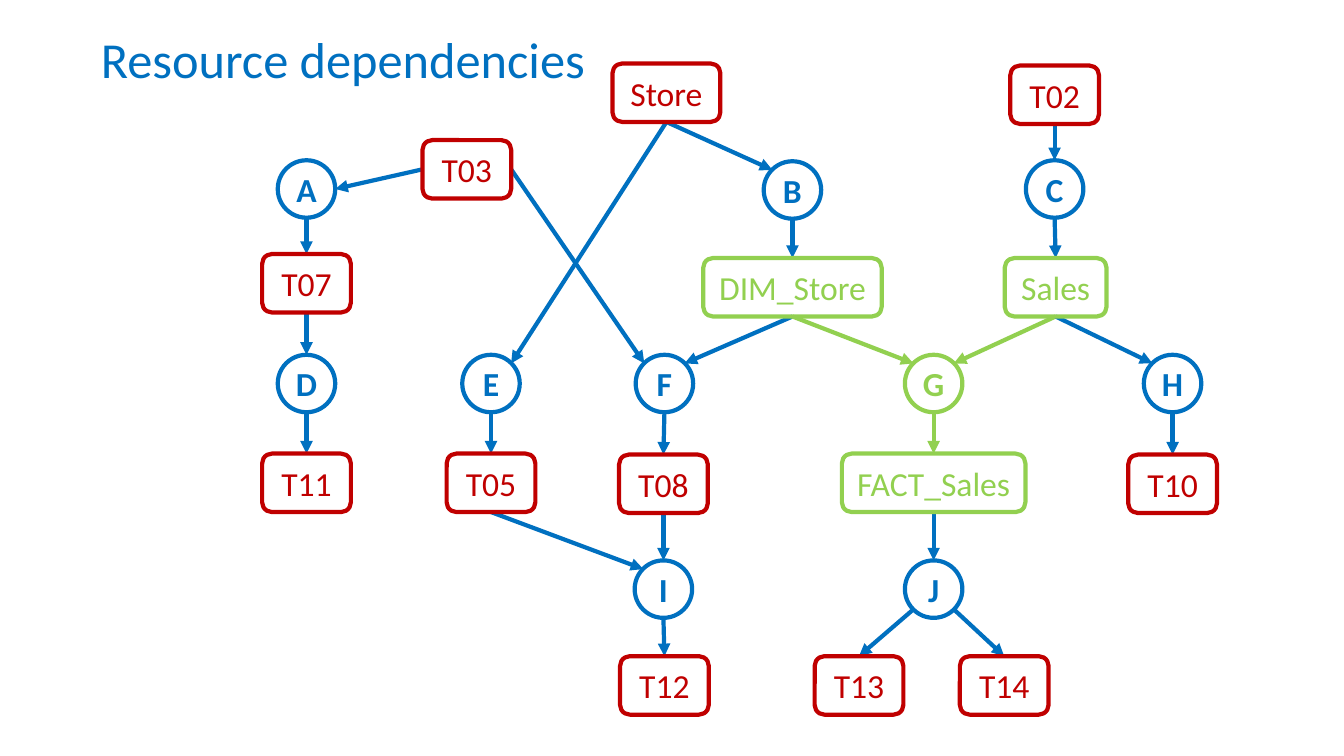
from pptx import Presentation
from pptx.dml.color import RGBColor
from pptx.enum.shapes import MSO_CONNECTOR, MSO_SHAPE
from pptx.enum.text import MSO_ANCHOR, MSO_AUTO_SIZE, PP_ALIGN
from pptx.oxml.ns import qn
from pptx.util import Inches, Pt
from lxml.etree import SubElement

COLORS = {"blue": "0070C0", "red": "C00000", "green": "92D050"}
FONT = "Calibri"
CIRCLE = 0.57
BOX_HEIGHT = 0.58
BOX_WIDTH = 0.88

# name: (centre x, top)
CIRCLES = {
    "A": (0.44, 0.96), "B": (5.26, 0.97), "C": (7.86, 0.96),
    "D": (0.44, 2.89), "E": (2.27, 2.89), "F": (3.99, 2.89),
    "G": (6.66, 2.89), "H": (9.03, 2.89),
    "I": (3.98, 4.93), "J": (6.66, 4.93),
}
BOXES = {
    "Store": (4.01, 0), "T02": (7.86, 0.02), "T03": (2.03, 0.76),
    "DIM_Store": (5.26, 1.93), "Sales": (7.87, 1.93), "T07": (0.44, 1.89),
    "T05": (2.27, 3.87), "T08": (3.98, 3.88), "FACT_Sales": (6.66, 3.87),
    "T10": (9.03, 3.88), "T11": (0.44, 3.87), "T12": (3.99, 5.88),
    "T13": (5.92, 5.88), "T14": (7.36, 5.88),
}
WIDTHS = {"Store": 1.07, "DIM_Store": 1.77, "Sales": 1.01, "FACT_Sales": 1.82}
GREEN_NODES = {"DIM_Store", "Sales", "G", "FACT_Sales"}
SITES = {"top": 0, "left": 1, "bottom": 2, "right": 3}
ANCHORS = {
    "top": (0.5, 0), "left": (0, 0.5), "bottom": (0.5, 1), "right": (1, 0.5),
    "nw": (0.15, 0.15), "ne": (0.85, 0.15),
    "sw": (0.15, 0.85), "se": (0.85, 0.85),
}
EDGES = [
    ("DIM_Store", "bottom", "F", "ne"), ("G", "bottom", "FACT_Sales", "top"),
    ("E", "bottom", "T05", "top"), ("F", "bottom", "T08", "top"),
    ("DIM_Store", "bottom", "G", "nw"), ("Sales", "bottom", "G", "ne"),
    ("Sales", "bottom", "H", "nw"), ("T03", "left", "A", "right"),
    ("A", "bottom", "T07", "top"), ("T03", "right", "F", "nw"),
    ("Store", "bottom", "E", "ne"), ("Store", "bottom", "B", "nw"),
    ("T02", "bottom", "C", "top"), ("B", "bottom", "DIM_Store", "top"),
    ("C", "bottom", "Sales", "top"), ("T07", "bottom", "D", "top"),
    ("D", "bottom", "T11", "top"), ("T05", "bottom", "I", "nw"),
    ("T08", "bottom", "I", "top"), ("I", "bottom", "T12", "top"),
    ("FACT_Sales", "bottom", "J", "top"), ("J", "sw", "T13", "top"),
    ("J", "se", "T14", "top"), ("H", "bottom", "T10", "top"),
]


def rgb(name):
    return RGBColor.from_string(COLORS[name])


def style_font(p, size, color, bold=False):
    p.font.name = FONT
    p.font.size = Pt(size)
    p.font.bold = bold
    p.font.color.rgb = rgb(color)


def add_title(s, left, top, width, height):
    title = s.shapes.title
    title.left, title.top = Inches(left), Inches(top)
    title.width, title.height = Inches(width), Inches(height)
    tf = title.text_frame
    tf.text = "Resource dependencies"
    tf.auto_size = MSO_AUTO_SIZE.NONE
    tf.vertical_anchor = MSO_ANCHOR.TOP
    tf.margin_top = 0
    p = tf.paragraphs[0]
    p.alignment = PP_ALIGN.LEFT
    p.line_spacing = 0.9
    p.space_before = Pt(10)
    style_font(p, 36, "blue")


def add_node(s, name, kind, center, top, width, height, color):
    sp = s.shapes.add_shape(kind, Inches(center - width / 2), Inches(top),
                            Inches(width), Inches(height))
    sp.shadow.inherit = False
    sp.fill.background()
    sp.line.color.rgb = rgb(color)
    sp.line.width = Pt(3)
    tf = sp.text_frame
    tf.text = name
    tf.word_wrap = False
    tf.margin_left = tf.margin_right = 0
    tf.vertical_anchor = MSO_ANCHOR.MIDDLE
    p = tf.paragraphs[0]
    p.alignment = PP_ALIGN.CENTER
    style_font(p, 24, color, kind == MSO_SHAPE.OVAL)
    return sp


def add_arrow(s, color):
    arrow = s.shapes.add_connector(MSO_CONNECTOR.STRAIGHT, 0, 0, 0, 0)
    arrow.line.color.rgb = rgb(color)
    arrow.line.width = Pt(3)
    SubElement(arrow.line._get_or_add_ln(), qn("a:tailEnd"), type="triangle")
    SubElement(arrow._element.spPr, qn("a:effectLst"))
    return arrow


def anchor_point(sp, side):
    fx, fy = ANCHORS[side]
    return sp.left + int(sp.width * fx), sp.top + int(sp.height * fy)


def route_arrow(arrow, nodes, start, start_side, end, end_side):
    arrow.begin_x, arrow.begin_y = anchor_point(nodes[start], start_side)
    arrow.end_x, arrow.end_y = anchor_point(nodes[end], end_side)
    if start in BOXES:
        arrow.begin_connect(nodes[start], SITES[start_side])
    if end in BOXES:
        arrow.end_connect(nodes[end], SITES[end_side])


def add_graph(s, left, top):
    nodes = {}
    for name, (x, y) in CIRCLES.items():
        color = "green" if name in GREEN_NODES else "blue"
        nodes[name] = add_node(s, name, MSO_SHAPE.OVAL, left + x, top + y,
                               CIRCLE, CIRCLE, color)
    arrows = [add_arrow(s, "green" if {edge[0], edge[2]} <= GREEN_NODES else "blue")
              for edge in EDGES]
    for name, (x, y) in BOXES.items():
        color = "green" if name in GREEN_NODES else "red"
        nodes[name] = add_node(s, name, MSO_SHAPE.ROUNDED_RECTANGLE,
                               left + x, top + y, WIDTHS.get(name, BOX_WIDTH),
                               BOX_HEIGHT, color)
    for arrow, edge in zip(arrows, EDGES):
        route_arrow(arrow, nodes, *edge)


def main():
    prs = Presentation()
    prs.slide_width, prs.slide_height = Inches(13.33), Inches(7.5)
    s = prs.slides.add_slide(prs.slide_layouts[5])
    add_title(s, 0.9, 0.35, 9.63, 0.62)
    add_graph(s, 2.6, 0.63)
    prs.save("out.pptx")


if __name__ == "__main__":
    main()
